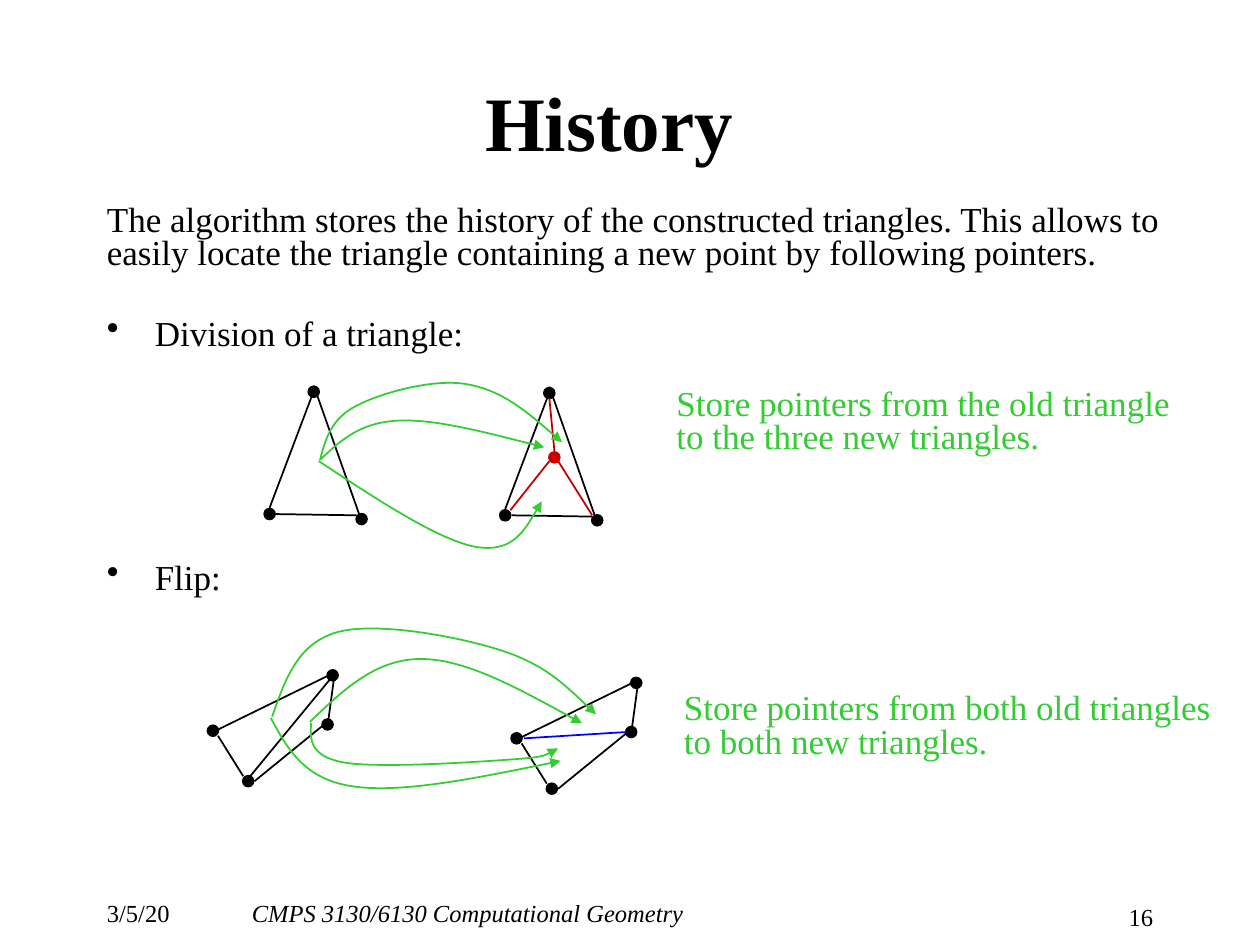
from lxml import etree
from pptx import Presentation
from pptx.dml.color import RGBColor
from pptx.enum.shapes import MSO_CONNECTOR, MSO_SHAPE
from pptx.enum.text import MSO_ANCHOR, PP_ALIGN
from pptx.oxml.ns import qn
from pptx.util import Pt

ELLIPSE = MSO_SHAPE.OVAL
STRAIGHT = MSO_CONNECTOR.STRAIGHT
CENTER, RIGHT = PP_ALIGN.CENTER, PP_ALIGN.RIGHT
TOP, MIDDLE = MSO_ANCHOR.TOP, MSO_ANCHOR.MIDDLE
SCALE = 9144
DOT_SIZE = 10
FONT = "Times New Roman"
COLORS = {
    "black": "000000",
    "pointer": "33CC33",
    "new_point": "CC0000",
    "new_edge": "C00000",
    "flipped_edge": "0000FF",
}
BODY_FORMAT = {"line_spacing": 0.8, "space_before": Pt(4)}


def px(value):
    return int(value * SCALE)


def color(name):
    return RGBColor.from_string(COLORS[name])


def set_attributes(target, values):
    for name, value in values.items():
        setattr(target, name, value)


def shift(box, point):
    return box[0] + point[0], box[1] + point[1]


def add_text_frame(slide, box, wrap=True, anchor=TOP):
    frame = slide.shapes.add_textbox(*map(px, box)).text_frame
    set_attributes(frame, {"word_wrap": wrap, "vertical_anchor": anchor})
    return frame


def write(paragraph, text, size, color_name="black", font=None, layout=None):
    paragraph.text = text
    set_attributes(paragraph, layout or {})
    for run in paragraph.runs:
        set_attributes(run.font, {"name": FONT, "size": Pt(size), **(font or {})})
        run.font.color.rgb = color(color_name)


def add_bullet(paragraph):
    properties = paragraph._p.get_or_add_pPr()
    properties.set("marL", str(px(38)))
    properties.set("indent", str(px(-38)))
    etree.SubElement(properties, qn("a:buChar"), char="•")


def add_dot(slide, box, point, color_name="black"):
    left, top = shift(box, point)
    dot = slide.shapes.add_shape(ELLIPSE, px(left), px(top), px(DOT_SIZE), px(DOT_SIZE))
    dot.shadow.inherit = False
    dot.fill.solid()
    dot.fill.fore_color.rgb = color(color_name)
    dot.line.fill.background()


def add_edge(slide, box, start, end, color_name="black"):
    points = (*shift(box, start), *shift(box, end))
    edge = slide.shapes.add_connector(STRAIGHT, *map(px, points))
    edge.line.width = Pt(1)
    edge.line.color.rgb = color(color_name)
    etree.SubElement(edge._element.spPr, qn("a:effectLst"))


def add_pointer(slide, box, points):
    start, *controls = [shift(box, point) for point in points]
    builder = slide.shapes.build_freeform(*start, scale=SCALE)
    builder.add_line_segments(controls, close=False)
    pointer = builder.convert_to_shape()
    pointer.shadow.inherit = False
    pointer.fill.background()
    pointer.line.width = Pt(1)
    pointer.line.color.rgb = color("pointer")
    segments = list(pointer._element.iter(qn("a:lnTo")))
    for index in range(0, len(segments), 3):
        curve = etree.Element(qn("a:cubicBezTo"))
        segments[index].addprevious(curve)
        for segment in segments[index:index + 3]:
            curve.append(segment[0])
            segment.getparent().remove(segment)
    line = pointer.line._get_or_add_ln()
    etree.SubElement(line, qn("a:tailEnd"), type="triangle")


def add_figure(slide, box, dots, edges):
    for dot in dots:
        add_dot(slide, box, dot)
    for start, end in edges:
        add_edge(slide, box, start, end)


def add_note(slide, box, text):
    frame = add_text_frame(slide, box, wrap=False)
    write(frame.paragraphs[0], text, 20, "pointer", layout=BODY_FORMAT)


def add_title(slide, box):
    frame = add_text_frame(slide, box, anchor=MIDDLE)
    write(frame.paragraphs[0], "History", 44, font={"bold": True}, layout={"alignment": CENTER})


def add_body(slide, box):
    frame = add_text_frame(slide, box)
    write(
        frame.paragraphs[0],
        "The algorithm stores the history of the constructed triangles. "
        "This allows to easily locate the triangle containing a new point by following pointers.",
        20,
        layout=BODY_FORMAT,
    )
    for text, gap in (("Division of a triangle:", 27), ("Flip:", 120)):
        paragraph = frame.add_paragraph()
        write(paragraph, text, 20, layout={**BODY_FORMAT, "space_before": Pt(gap)})
        add_bullet(paragraph)


def add_division(slide, box):
    dots = [(35, 2), (73, 103), (0, 99)]
    edges = [((74, 105), (10, 104)), ((5, 99), (39, 9)), ((76, 104), (40, 2))]
    for offset in ((0, 0), (187, 1)):
        add_figure(slide, shift(box, offset), dots, edges)
    add_dot(slide, box, (226, 54), "new_point")
    for start, end in (((231, 54), (227, 12)), ((196, 101), (227, 62)), ((261, 105), (234, 62))):
        add_edge(slide, box, start, end, "new_edge")
    pointers = [
        [(45, 61), (60, 47), (75, 32), (105, 30), (135, 28), (179, 40), (223, 51)],
        [(44, 62), (91, 93), (138, 124), (168, 130), (197, 135), (209, 115), (221, 94)],
        [(45, 61), (49, 45), (54, 28), (74, 18), (93, 8), (135, -4), (162, 1),
         (190, 6), (213, 26), (237, 47)],
    ]
    for points in pointers:
        add_pointer(slide, box, points)
    note_box = (*shift(box, (318, 0)), 414, 64)
    add_note(slide, note_box, "Store pointers from the old triangle\vto the three new triangles.")


def add_flip(slide, box):
    dots = [(28, 116), (0, 76), (91, 71), (95, 32)]
    edges = [
        ((29, 117), (9, 85)),
        ((7, 81), (99, 36)),
        ((38, 121), (97, 73)),
        ((96, 77), (101, 40)),
    ]
    for offset in ((0, 0), (241, 6)):
        add_figure(slide, shift(box, offset), dots, edges)
    add_edge(slide, box, (33, 119), (103, 34))
    add_edge(slide, box, (252, 87), (333, 82), "flipped_edge")
    pointers = [
        [(52, 70), (62, 41), (72, 12), (103, 3), (133, -6), (199, 6), (233, 17),
         (268, 28), (288, 48), (309, 68)],
        [(82, 74), (108, 49), (134, 24), (170, 24), (206, 24), (252, 50), (298, 75)],
        [(51, 71), (64, 95), (77, 119), (115, 125), (154, 131), (217, 118), (281, 105)],
        [(83, 75), (82, 88), (82, 101), (108, 106), (134, 111), (211, 106), (239, 104),
         (268, 102), (273, 99), (279, 95)],
    ]
    for points in pointers:
        add_pointer(slide, box, points)
    note_box = (*shift(box, (369, 47)), 441, 64)
    add_note(slide, note_box, "Store pointers from both old triangles\vto both new triangles.")


def add_footer(slide, box):
    parts = [
        ((0, 0), (95, 25), "3/5/20", {}, {}),
        ((115, 0), (634, 25), "CMPS 3130/6130 Computational Geometry", {"italic": True}, {}),
        ((776, 3), (74, 22), "16", {}, {"alignment": RIGHT}),
    ]
    for offset, size, text, font, layout in parts:
        frame = add_text_frame(slide, (*shift(box, offset), *size))
        write(frame.paragraphs[0], text, 14, font=font, layout=layout)


def main():
    presentation = Presentation()
    set_attributes(presentation, {"slide_width": px(1000), "slide_height": px(750)})
    slide = presentation.slides.add_slide(presentation.slide_layouts[6])
    add_footer(slide, (75, 708))
    add_title(slide, (71, 33, 825, 125))
    add_body(slide, (75, 158, 878, 174))
    add_division(slide, (209, 304))
    add_flip(slide, (164, 499))
    presentation.save("out.pptx")


if __name__ == "__main__":
    main()
